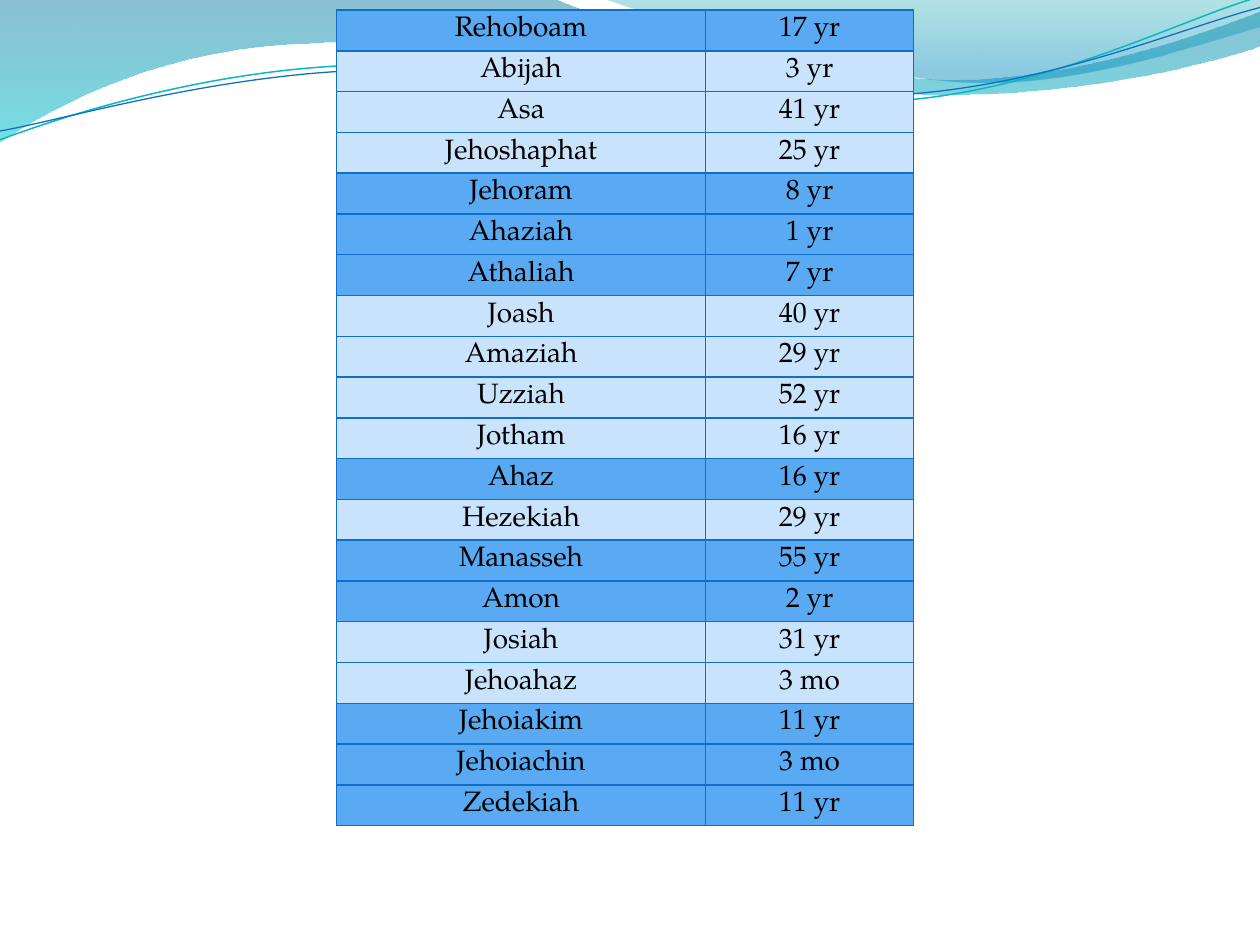
from pptx import Presentation
from pptx.dml.color import RGBColor
from pptx.enum.text import MSO_ANCHOR, PP_ALIGN
from pptx.oxml.ns import qn
from pptx.util import Inches, Pt
from lxml.etree import SubElement

FONT = "TeX Gyre Pagella"
DARK, LIGHT, BORDER = "59AAF2", "C8E3FB", "0F6FC6"

# Each reign: king, length, row colour
REIGNS = [
    ("Rehoboam", "17 yr", DARK), ("Abijah", "3 yr", LIGHT),
    ("Asa", "41 yr", LIGHT), ("Jehoshaphat", "25 yr", LIGHT),
    ("Jehoram", "8 yr", DARK), ("Ahaziah", "1 yr", DARK),
    ("Athaliah", "7 yr", DARK), ("Joash", "40 yr", LIGHT),
    ("Amaziah", "29 yr", LIGHT), ("Uzziah", "52 yr", LIGHT),
    ("Jotham", "16 yr", LIGHT), ("Ahaz", "16 yr", DARK),
    ("Hezekiah", "29 yr", LIGHT), ("Manasseh", "55 yr", DARK),
    ("Amon", "2 yr", DARK), ("Josiah", "31 yr", LIGHT),
    ("Jehoahaz", "3 mo", LIGHT), ("Jehoiakim", "11 yr", DARK),
    ("Jehoiachin", "3 mo", DARK), ("Zedekiah", "11 yr", DARK),
]

# Wave outlines in inches: a pair is a corner, six numbers are a Bezier curve
WIDE_WAVE = [
    (0, 0), (4.4, -0.01), (4.76, 0.17, 6.64, 0.63, 7.58, 0.63),
    (8.53, 0.63, 9.58, 0.26, 10, 0.09), (10.01, 0.36),
    (9.83, 0.44, 8.7, 0.76, 7.46, 0.75), (6.22, 0.75, 3.82, 0.28, 2.57, 0.34),
    (1.29, 0.36, 0.46, 0.83, -0.01, 1.13),
]
RIGHT_WAVE = [
    (4.79, -0.01), (5.09, 0.11, 6.82, 0.62, 7.69, 0.65),
    (8.56, 0.69, 9.61, 0.32, 10, 0.21), (10, 0),
]
TEAL_LINE = [
    (0, 1.11), (0.48, 0.93, 1.58, 0.57, 2.77, 0.52),
    (3.95, 0.47, 5.93, 0.89, 7.13, 0.8), (8.33, 0.71, 9.38, 0.15, 9.98, -0.02),
]
BLUE_LINE = [
    (0, 1.04), (0.47, 0.96, 1.64, 0.61, 2.83, 0.56),
    (4.03, 0.51, 5.97, 0.84, 7.17, 0.75), (8.36, 0.67, 9.41, 0.21, 10, 0.06),
]


def color(value):
    return RGBColor.from_string(value)


def add_outline(slide, outline, left, top, close):
    points = [
        (left + Inches(segment[i]), top + Inches(segment[i + 1]))
        for segment in outline for i in range(0, len(segment), 2)]
    builder = slide.shapes.build_freeform(*points[0])
    builder.add_line_segments(points[1:], close=close)
    shape = builder.convert_to_shape()
    shape.shadow.inherit = False
    # Join the three points of each curve into one Bezier segment
    nodes = iter(list(shape.element.spPr.iter(qn("a:lnTo"))))
    for segment in outline[1:]:
        first = next(nodes)
        if len(segment) == 6:
            first.tag = qn("a:cubicBezTo")
            for _ in range(2):
                node = next(nodes)
                first.append(node[0])
                node.getparent().remove(node)
    return shape


def add_wave(slide, outline, left, top, stops):
    shape = add_outline(slide, outline, left, top, True)
    shape.line.fill.background()
    shape.fill.gradient()
    shape.fill.gradient_angle = 270
    for stop, (position, value, opacity) in zip(shape.fill.gradient_stops, stops):
        stop.position = position
        stop.color.rgb = color(value)
    # Opacity of each stop
    for node, stop in zip(shape.element.spPr.iter(qn("a:srgbClr")), stops):
        SubElement(node, qn("a:alpha"), val=str(stop[2] * 1000))


def add_wave_line(slide, outline, left, top, value, width):
    shape = add_outline(slide, outline, left, top, False)
    shape.fill.background()
    shape.line.color.rgb = color(value)
    shape.line.width = Pt(width)


def add_wave_header(slide, left, top):
    add_wave(slide, WIDE_WAVE, left, top, [(0, "0074A1", 45), (1, "00C6CF", 55)])
    add_wave(slide, RIGHT_WAVE, left, top, [(0, "00A1A9", 30), (0.8, "008BBF", 45)])
    add_wave_line(slide, TEAL_LINE, left, top, "0AB8BF", 0.85)
    add_wave_line(slide, BLUE_LINE, left, top, BORDER, 0.75)


def format_cell(cell, text, fill):
    cell.text = text
    cell.margin_top, cell.margin_bottom = Inches(0.05), 0
    cell.vertical_anchor = MSO_ANCHOR.TOP
    paragraph = cell.text_frame.paragraphs[0]
    paragraph.alignment = PP_ALIGN.CENTER
    paragraph.font.size = Pt(16)
    paragraph.font.name = FONT
    paragraph.font.color.rgb = color("000000")
    # Borders come before the fill in the cell properties
    properties = cell._tc.get_or_add_tcPr()
    for side in ("a:lnL", "a:lnR", "a:lnT", "a:lnB"):
        line = SubElement(properties, qn(side), w=str(Pt(1)))
        solid = SubElement(line, qn("a:solidFill"))
        SubElement(solid, qn("a:srgbClr"), val=BORDER)
    cell.fill.solid()
    cell.fill.fore_color.rgb = color(fill)


def add_reign_table(slide, left, top, width, height):
    table = slide.shapes.add_table(len(REIGNS), 2, left, top, width, height).table
    table.first_row = table.horz_banding = False
    table.columns[0].width = Inches(2.93)
    table.columns[1].width = width - Inches(2.93)
    for row, (king, years, fill) in zip(table.rows, REIGNS):
        for cell, text in zip(row.cells, (king, years)):
            format_cell(cell, text, fill)


def main():
    presentation = Presentation()
    presentation.slide_width, presentation.slide_height = Inches(10), Inches(7.5)
    slide = presentation.slides.add_slide(presentation.slide_layouts[6])
    add_wave_header(slide, 0, 0)
    add_reign_table(slide, Inches(2.67), Inches(0.08), Inches(4.58), Inches(6.48))
    presentation.save("out.pptx")


if __name__ == "__main__":
    main()
